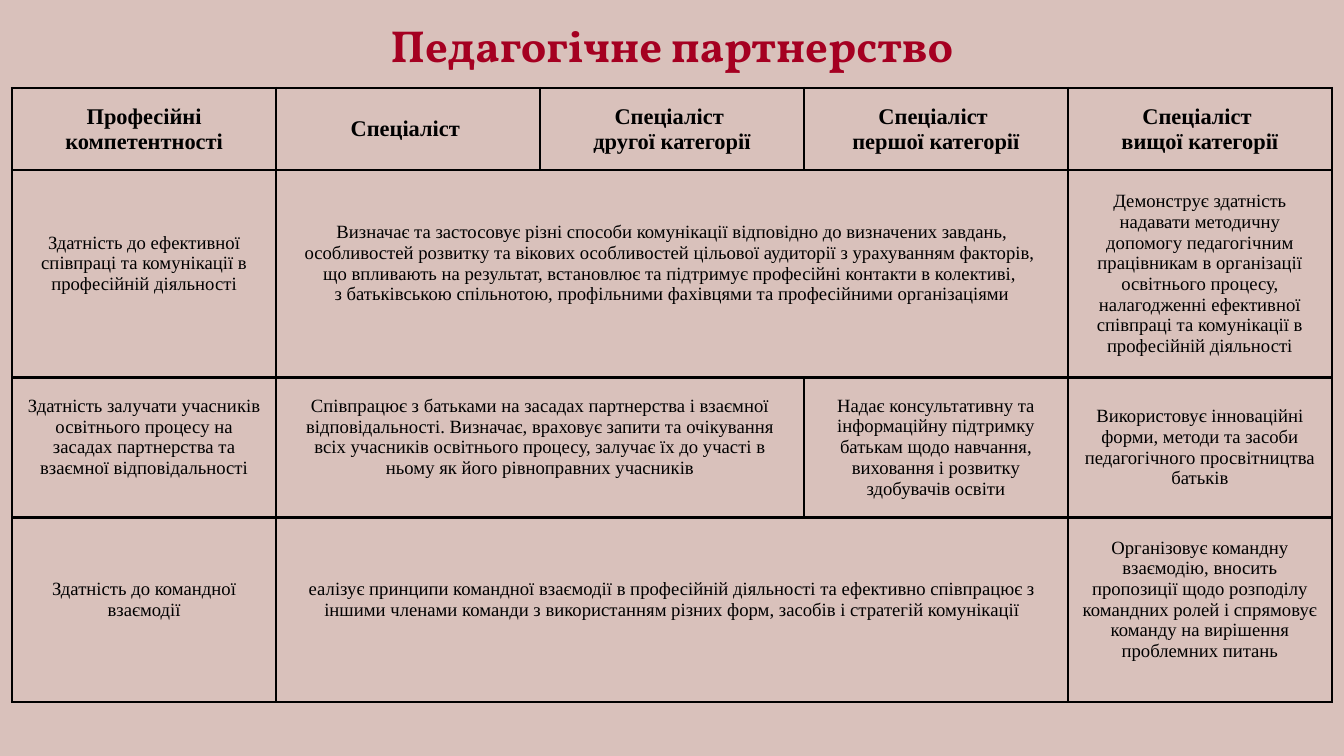
from dataclasses import dataclass

from lxml import etree
from pptx import Presentation
from pptx.dml.color import RGBColor
from pptx.enum import text
from pptx.oxml import ns
from pptx.util import Pt


@dataclass(frozen=True)
class Theme:
    background: str = "D9C1BB"
    accent: str = "A50021"
    ink: str = "000000"
    title_font: str = "Vollkorn"
    body_font: str = "Times New Roman"
    title_size: float = 48
    header_size: float = 24
    body_size: float = 20
    border: float = 3
    inset: float = 15
    lift: float = 22


class SlideBuilder:
    def __init__(self, slide, theme):
        self.s = slide
        self.theme = theme
        fill = slide.background.fill
        fill.solid()
        fill.fore_color.rgb = RGBColor.from_string(theme.background)

    def add_lines(self, tf, lines, font, size, color, bold=False, spacing=1.0):
        tf.word_wrap = True
        for i, line in enumerate(lines):
            p = tf.add_paragraph() if i else tf.paragraphs[0]
            p.alignment = text.PP_ALIGN.CENTER
            p.line_spacing = spacing
            r = p.add_run()
            r.text = line
            r.font.name = font
            r.font.size = Pt(size)
            r.font.bold = bold
            r.font.color.rgb = RGBColor.from_string(color)

    def title(self, line, left, top, width, height):
        t = self.theme
        sp = self.s.shapes.title
        sp.left, sp.top, sp.width, sp.height = map(Pt, (left, top, width, height))
        tf = sp.text_frame
        tf.auto_size = text.MSO_AUTO_SIZE.NONE
        tf.vertical_anchor = text.MSO_ANCHOR.TOP
        tf.margin_left = tf.margin_right = tf.margin_top = tf.margin_bottom = 0
        self.add_lines(tf, [line], t.title_font, t.title_size, t.accent, True, 1.1)

    def frame(self, cell):
        tc_pr = cell._tc.get_or_add_tcPr()
        for side in ("lnL", "lnR", "lnT", "lnB"):
            ln = etree.SubElement(tc_pr, ns.qn(f"a:{side}"), w=str(Pt(self.theme.border)))
            fill = etree.SubElement(ln, ns.qn("a:solidFill"))
            etree.SubElement(fill, ns.qn("a:srgbClr"), val=self.theme.ink)
        cell.fill.background()

    def table(self, rows, heights, left, top, col_width, cols):
        t = self.theme
        shape = self.s.shapes.add_table(
            len(rows), cols, Pt(left), Pt(top), Pt(col_width * cols), Pt(sum(heights)))
        tbl = shape.table
        tbl.first_row = tbl.horz_banding = False
        for col in tbl.columns:
            col.width = Pt(col_width)
        for row, height in zip(tbl.rows, heights):
            row.height = Pt(height)
        for cell in tbl.iter_cells():
            self.frame(cell)
        for i, row in enumerate(rows):
            j = 0
            for lines, span, lifted in row:
                cell = tbl.cell(i, j)
                if span > 1:
                    cell.merge(tbl.cell(i, j + span - 1))
                cell.vertical_anchor = text.MSO_ANCHOR.MIDDLE
                cell.margin_left = cell.margin_right = cell.margin_top = Pt(t.inset)
                cell.margin_bottom = Pt(t.inset + t.lift * lifted)
                size = t.body_size if i else t.header_size
                self.add_lines(cell.text_frame, lines, t.body_font, size, t.ink, i == 0)
                j += span


def entry(*lines, span=1, lifted=False):
    return lines, span, lifted


ROWS = [
    [
        entry("Професійні компетентності"),
        entry("Спеціаліст "),
        *(entry("Спеціаліст ", f"{rank} категорії") for rank in ("другої", "першої", "вищої")),
    ],
    [
        entry("Здатність до ефективної співпраці та комунікації в професійній діяльності",
              lifted=True),
        entry("Визначає та застосовує різні способи комунікації відповідно до визначених "
              "завдань, особливостей розвитку та вікових особливостей цільової аудиторії "
              "з урахуванням факторів, ",
              "що впливають на результат, встановлює та підтримує професійні контакти "
              "в колективі, ",
              "з батьківською спільнотою, профільними фахівцями та професійними організаціями",
              span=3, lifted=True),
        entry("Демонструє здатність надавати методичну допомогу педагогічним працівникам "
              "в організації освітнього процесу, налагодженні ефективної співпраці "
              "та комунікації в професійній діяльності"),
    ],
    [
        entry("Здатність залучати учасників освітнього процесу на засадах партнерства "
              "та взаємної відповідальності", lifted=True),
        entry("Співпрацює з батьками на засадах партнерства і взаємної відповідальності. "
              "Визначає, враховує запити та очікування всіх учасників освітнього процесу, "
              "залучає їх до участі в ньому як його рівноправних учасників",
              span=2, lifted=True),
        entry("Надає консультативну та інформаційну підтримку батькам щодо навчання, "
              "виховання і розвитку здобувачів освіти"),
        entry("Використовує інноваційні форми, методи та засоби педагогічного "
              "просвітництва батьків"),
    ],
    [
        entry("Здатність до командної взаємодії", lifted=True),
        entry("еалізує принципи командної взаємодії в професійній діяльності та ефективно "
              "співпрацює з іншими членами команди з використанням різних форм, засобів "
              "і стратегій комунікації", span=3, lifted=True),
        entry("Організовує командну взаємодію, вносить пропозиції щодо розподілу командних "
              "ролей і спрямовує команду на вирішення проблемних питань", lifted=True),
    ],
]


def main():
    prs = Presentation()
    prs.slide_width, prs.slide_height = Pt(1440), Pt(810)
    builder = SlideBuilder(prs.slides.add_slide(prs.slide_layouts[5]), Theme())
    builder.table(ROWS, (88, 222, 150, 198), left=13, top=94.3, col_width=282.8, cols=5)
    builder.title("Педагогічне партнерство", 81, 13, 1278, 64)
    prs.save("out.pptx")


if __name__ == "__main__":
    main()
